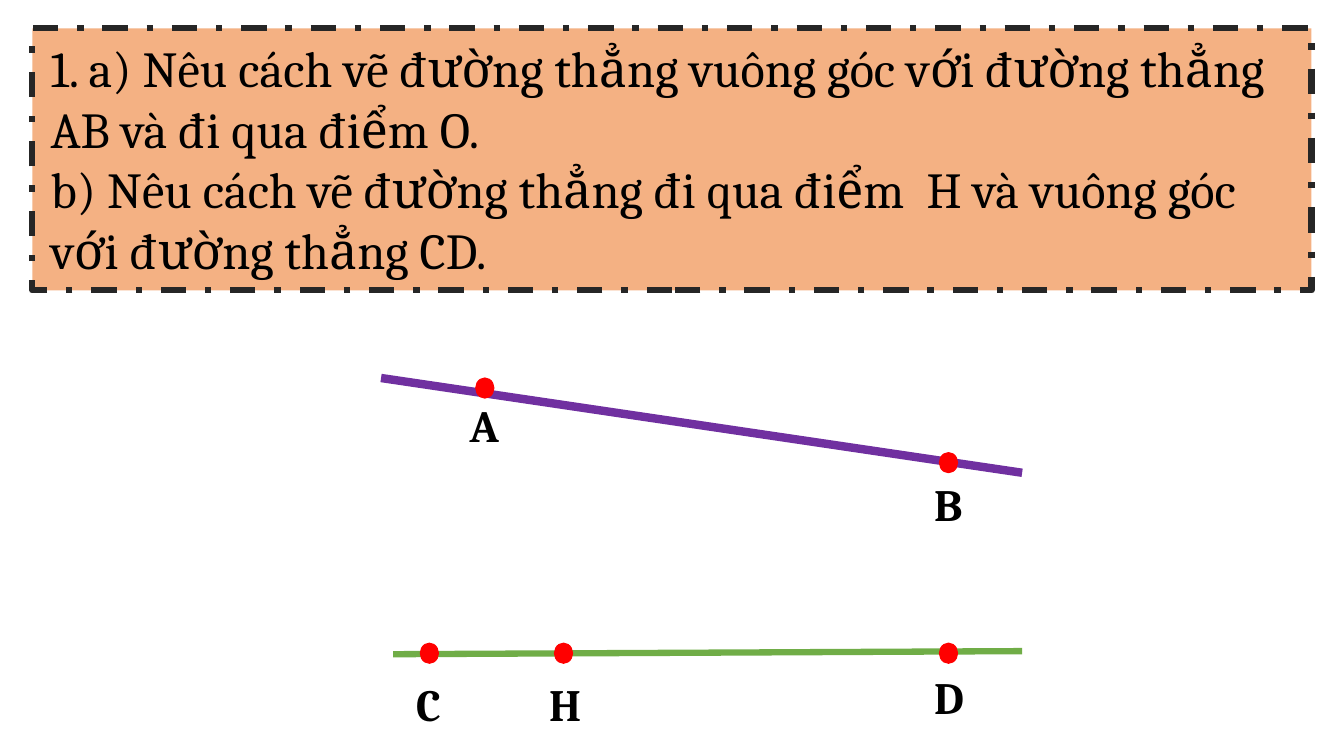
import pptx
import pptx.util
import pptx.dml.color
import pptx.enum.dml
import pptx.enum.shapes
import pptx.enum.text
from lxml import etree

Pt = pptx.util.Pt
COLORS = {
    "question": "F4B183",
    "border": "262626",
    "line_ab": "7030A0",
    "line_cd": "70AD47",
    "point": "FF0000",
    "text": "000000",
}


def rgb(name):
    return pptx.dml.color.RGBColor.from_string(COLORS[name])


def write(frame, text, size, bold=False, wrap=True, margins=(7.2, 3.6)):
    """Fill a text frame, one paragraph for each line of text."""
    frame.word_wrap = wrap
    frame.auto_size = pptx.enum.text.MSO_AUTO_SIZE.SHAPE_TO_FIT_TEXT
    frame.vertical_anchor = pptx.enum.text.MSO_ANCHOR.TOP
    frame.margin_left = frame.margin_right = Pt(margins[0])
    frame.margin_top = frame.margin_bottom = Pt(margins[1])
    for index, line in enumerate(text.split("\n")):
        paragraph = frame.add_paragraph() if index else frame.paragraphs[0]
        paragraph.alignment = pptx.enum.text.PP_ALIGN.LEFT
        run = paragraph.add_run()
        run.text = line
        run.font.name = "Cambria"
        run.font.size = Pt(size)
        run.font.bold = bold
        run.font.color.rgb = rgb("text")


deck = pptx.Presentation()
deck.slide_width, deck.slide_height = Pt(960), Pt(540)
shapes = deck.slides.add_slide(deck.slide_layouts[6]).shapes

# Question
question = shapes.add_shape(pptx.enum.shapes.MSO_SHAPE.RECTANGLE,
                            Pt(23.1), Pt(20.2), Pt(913.7), Pt(187.2))
question.shadow.inherit = False
question.fill.solid()
question.fill.fore_color.rgb = rgb("question")
question.line.color.rgb = rgb("border")
question.line.width = Pt(4.5)
question.line.dash_style = pptx.enum.dml.MSO_LINE.DASH_DOT
write(question.text_frame,
      "1. a) Nêu cách vẽ đường thẳng vuông góc với đường thẳng AB và đi qua điểm O.\n"
      "b) Nêu cách vẽ đường thẳng đi qua điểm  H và vuông góc với đường thẳng CD.",
      size=36, margins=(13, 6.5))

# Lines CD and AB
for color, width, x1, y1, x2, y2 in [
    ("line_cd", 4.5, 280.8, 467.3, 730.1, 465.1),
    ("line_ab", 6, 272.2, 270, 730.1, 337.7),
]:
    line = shapes.add_connector(pptx.enum.shapes.MSO_CONNECTOR.STRAIGHT,
                                Pt(x1), Pt(y1), Pt(x2), Pt(y2))
    line.line.color.rgb = rgb(color)
    line.line.width = Pt(width)
    etree.SubElement(line._element.spPr, pptx.oxml.ns.qn("a:effectLst"))

# Points: name, left and top of the dot, left, top and width of the label
for name, dot_x, dot_y, label_x, label_y, label_width in [
    ("A", 339.8, 270, 328.3, 280.8, 35.3),
    ("B", 671, 323.3, 660.2, 337, 35.3),
    ("C", 300.2, 459.4, 290.2, 479.5, 33.1),
    ("H", 396, 459.4, 385.2, 479.5, 38.2),
    ("D", 671, 459.4, 660.2, 474.5, 38.2),
]:
    dot = shapes.add_shape(pptx.enum.shapes.MSO_SHAPE.OVAL,
                           Pt(dot_x), Pt(dot_y), Pt(13), Pt(14.4))
    dot.shadow.inherit = False
    dot.fill.solid()
    dot.fill.fore_color.rgb = rgb("point")
    dot.line.color.rgb = rgb("point")
    dot.line.width = Pt(0.75)
    label = shapes.add_textbox(Pt(label_x), Pt(label_y), Pt(label_width), Pt(46.1))
    write(label.text_frame, name, size=32, bold=True, wrap=False)

deck.save("out.pptx")
